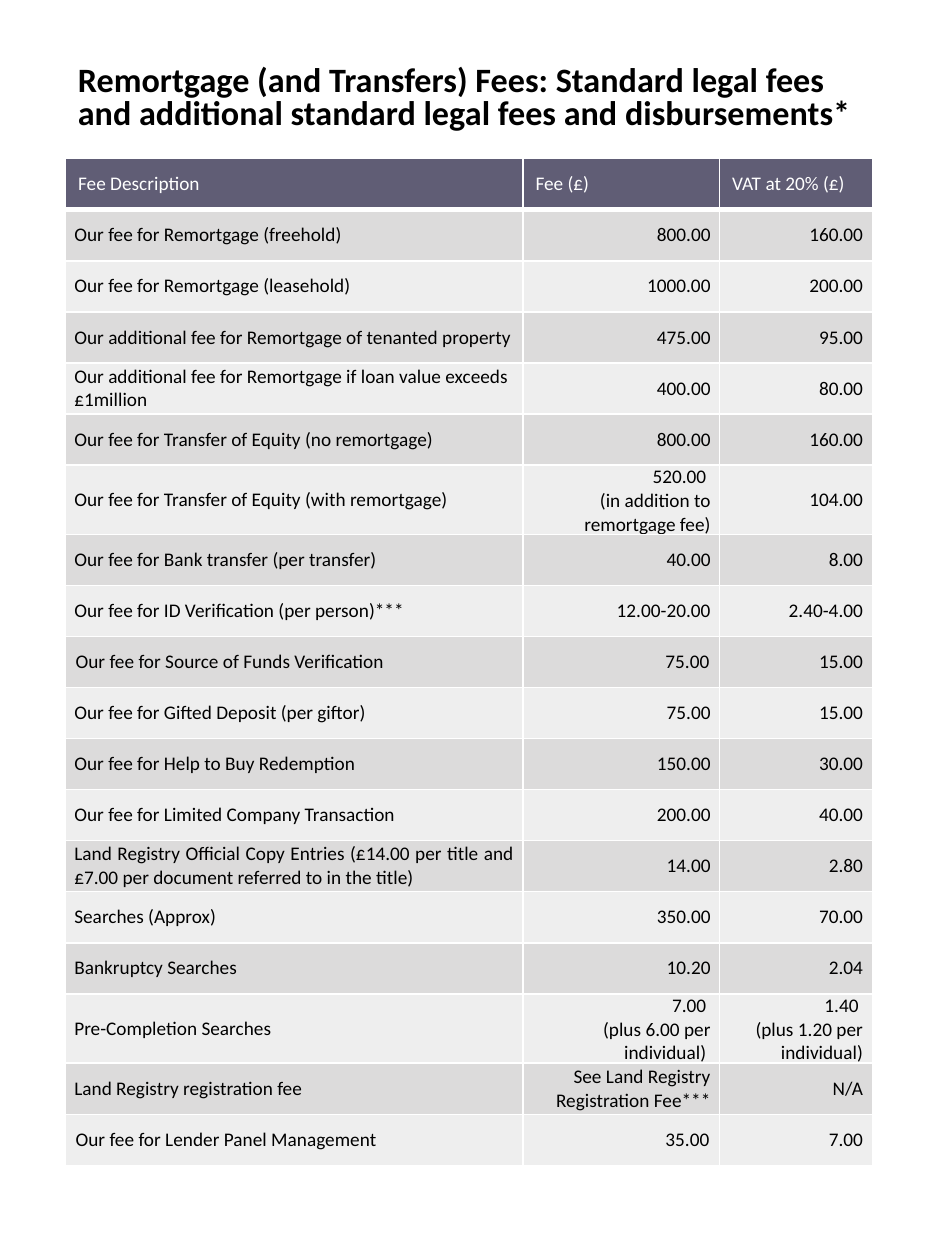
from dataclasses import dataclass

from lxml.etree import SubElement
from pptx import Presentation
from pptx.dml.color import RGBColor
from pptx.enum.text import MSO_ANCHOR, PP_ALIGN
from pptx.oxml.ns import qn
from pptx.util import Inches, Pt


@dataclass(frozen=True)
class Theme:
    font: str = "Calibri"
    title_size: float = 19.5
    table_size: float = 11
    ink: str = "000000"
    white: str = "FFFFFF"
    header: str = "605D75"
    bands: tuple = ("DCDBDB", "EEEEEE")
    rule: float = 1
    header_rule: float = 3


TITLE = (
    "Remortgage (and Transfers) Fees: Standard legal fees "
    "and additional standard legal fees and disbursements*"
)
HEADINGS = ("Fee Description", "Fee (£)", "VAT at 20% (£)")
REMORTGAGE_FEES = [
    ("Our fee for Remortgage (freehold)", "800.00", "160.00"),
    ("Our fee for Remortgage (leasehold)", "1000.00", "200.00"),
    ("Our additional fee for Remortgage of tenanted property", "475.00", "95.00"),
    ("Our additional fee for Remortgage if loan value exceeds £1million", "400.00", "80.00"),
    ("Our fee for Transfer of Equity (no remortgage)", "800.00", "160.00"),
    (
        "Our fee for Transfer of Equity (with remortgage)",
        "520.00 \n(in addition to remortgage fee)",
        "104.00",
    ),
]
SOURCE_OF_FUNDS = ("Our fee for Source of Funds Verification", "75.00", "15.00")
LENDER_PANEL = ("Our fee for Lender Panel Management", "35.00", "7.00")
ROOMY_ROWS = (SOURCE_OF_FUNDS, LENDER_PANEL)
OTHER_FEES = [
    ("Our fee for Bank transfer (per transfer)", "40.00", "8.00"),
    ("Our fee for ID Verification (per person)***", "12.00-20.00", "2.40-4.00"),
    SOURCE_OF_FUNDS,
    ("Our fee for Gifted Deposit (per giftor)", "75.00", "15.00"),
    ("Our fee for Help to Buy Redemption", "150.00", "30.00"),
    ("Our fee for Limited Company Transaction", "200.00", "40.00"),
    (
        "Land Registry Official Copy Entries (£14.00 per title and "
        "£7.00 per document referred to in the title)",
        "14.00",
        "2.80",
    ),
    ("Searches (Approx)", "350.00", "70.00"),
    ("Bankruptcy Searches", "10.20", "2.04"),
    (
        "Pre-Completion Searches",
        "7.00 \n(plus 6.00 per individual) ",
        "1.40 \n(plus 1.20 per individual)",
    ),
    ("Land Registry registration fee", "See Land Registry Registration Fee***", "N/A"),
    LENDER_PANEL,
]
COLUMN_WIDTHS = (3.63, 1.56, 1.22)
HEADER_INSETS = (0.1, 0.07, 0.1, 0.07)
ROOMY_INSETS = (0.08, 0.04, 0.08, 0.04)
COLUMN_INSETS = ((0.07, 0, 0.07, 0), (0.07, 0, 0.07, 0), (0, 0, 0.08, 0))


class FeeSlide:
    def __init__(self, slide, theme):
        self.slide = slide
        self.theme = theme

    def add_run(self, paragraph, text, size, color, bold=False):
        run = paragraph.add_run()
        run.text = text
        run.font.name = self.theme.font
        run.font.size = Pt(size)
        run.font.bold = bold
        run.font.color.rgb = RGBColor.from_string(color)

    def add_title(self, text, left, top, width, height):
        shape = self.slide.shapes.add_textbox(
            Inches(left), Inches(top), Inches(width), Inches(height)
        )
        frame = shape.text_frame
        frame.word_wrap = True
        frame.vertical_anchor = MSO_ANCHOR.MIDDLE
        paragraph = frame.paragraphs[0]
        paragraph.line_spacing = 0.8
        self.add_run(paragraph, text, self.theme.title_size, self.theme.ink, bold=True)

    def add_borders(self, cell, bottom_width):
        properties = cell._tc.get_or_add_tcPr()
        widths = {"L": self.theme.rule, "R": self.theme.rule, "T": self.theme.rule, "B": bottom_width}
        for side, width in widths.items():
            line = SubElement(properties, qn(f"a:ln{side}"), w=str(Pt(width)))
            fill = SubElement(line, qn("a:solidFill"))
            SubElement(fill, qn("a:srgbClr"), val=self.theme.white)

    def fill_cell(self, cell, text, insets, alignment, fill, color, bottom_width):
        self.add_borders(cell, bottom_width)
        cell.fill.solid()
        cell.fill.fore_color.rgb = RGBColor.from_string(fill)
        cell.vertical_anchor = MSO_ANCHOR.MIDDLE
        cell.margin_left, cell.margin_top, cell.margin_right, cell.margin_bottom = map(Inches, insets)
        frame = cell.text_frame
        for index, line in enumerate(text.split("\n")):
            paragraph = frame.add_paragraph() if index else frame.paragraphs[0]
            paragraph.alignment = alignment
            self.add_run(paragraph, line, self.theme.table_size, color)

    def add_fee_table(self, left, top, height):
        theme = self.theme
        fees = REMORTGAGE_FEES + OTHER_FEES
        table = self.slide.shapes.add_table(
            len(fees) + 1, len(HEADINGS),
            Inches(left), Inches(top), Inches(sum(COLUMN_WIDTHS)), Inches(height),
        ).table
        table.horz_banding = False
        for column, width in zip(table.columns, COLUMN_WIDTHS):
            column.width = Inches(width)
        for column, heading in enumerate(HEADINGS):
            self.fill_cell(
                table.cell(0, column), heading, HEADER_INSETS, PP_ALIGN.LEFT,
                theme.header, theme.white, theme.header_rule,
            )
        for index, fee in enumerate(fees):
            roomy = fee in ROOMY_ROWS
            justified = fee in OTHER_FEES and not roomy
            label_alignment = PP_ALIGN.JUSTIFY if justified else PP_ALIGN.LEFT
            for column, text in enumerate(fee):
                self.fill_cell(
                    table.cell(index + 1, column), text,
                    ROOMY_INSETS if roomy else COLUMN_INSETS[column],
                    PP_ALIGN.RIGHT if column else label_alignment,
                    theme.bands[index % 2], theme.ink, theme.rule,
                )


def main():
    presentation = Presentation()
    presentation.slide_width = Inches(7.5)
    presentation.slide_height = Inches(10)
    slide = presentation.slides.add_slide(presentation.slide_layouts[6])
    fee_slide = FeeSlide(slide, Theme())
    fee_slide.add_title(TITLE, 0.52, 0.46, 6.47, 0.66)
    fee_slide.add_fee_table(0.52, 1.26, 7.7)
    presentation.save("out.pptx")


if __name__ == "__main__":
    main()
